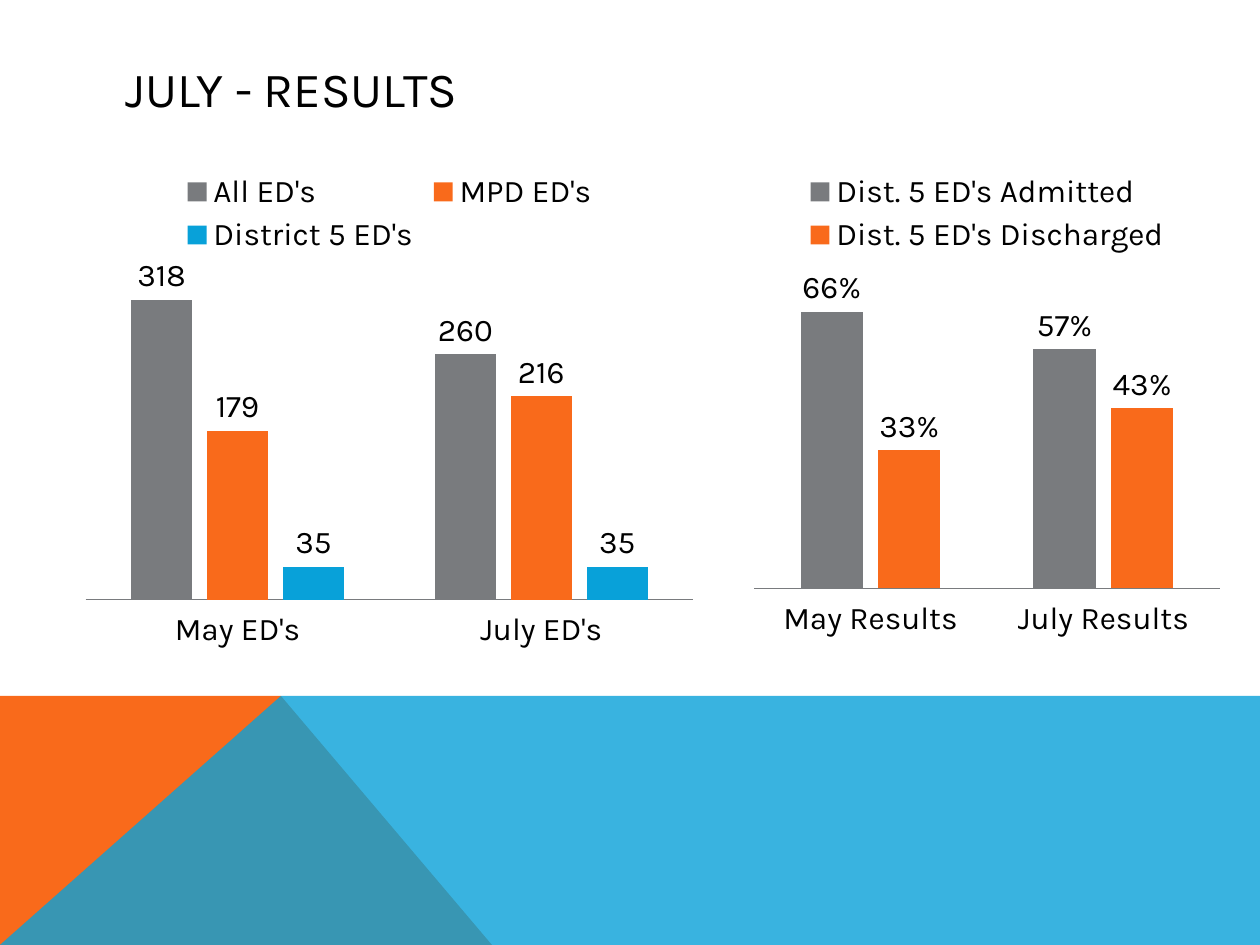
from lxml.etree import SubElement
from pptx import Presentation
from pptx.chart.data import CategoryChartData
from pptx.dml.color import RGBColor
from pptx.enum.chart import XL_CHART_TYPE as ChartType
from pptx.enum.chart import XL_LABEL_POSITION as LabelPos
from pptx.enum.chart import XL_LEGEND_POSITION as LegendPos
from pptx.enum.chart import XL_TICK_LABEL_POSITION as TickLabelPos
from pptx.enum.chart import XL_TICK_MARK as TickMark
from pptx.enum.text import MSO_ANCHOR, MSO_AUTO_SIZE, PP_ALIGN
from pptx.oxml import parse_xml
from pptx.oxml.ns import qn
from pptx.util import Emu, Pt

PX = 914400 / 126
WIDTH, HEIGHT = 1260, 945
FONT = "Karla"
BLACK = RGBColor(0x00, 0x00, 0x00)
GRAY = RGBColor(0x79, 0x7B, 0x7E)
ORANGE = RGBColor(0xF9, 0x6A, 0x1B)
BLUE = RGBColor(0x08, 0xA1, 0xD9)
SERIES_COLORS = (GRAY, ORANGE, BLUE)
CHART_NS = "http://schemas.openxmlformats.org/drawingml/2006/chart"

COUNTS = {
    "categories": ("May ED's", "July ED's"),
    "series": {"All ED's": (318, 260), "MPD ED's": (179, 216),
               "District 5 ED's": (35, 35)},
    "format": "General", "maximum": 350,
    "plot": {"x": 0.02, "y": 0.226, "w": 0.96, "h": 0.67},
}
OUTCOMES = {
    "categories": ("May Results", "July Results"),
    "series": {"Dist. 5 ED's Admitted": (0.66, 0.57),
               "Dist. 5 ED's Discharged": (0.33, 0.43)},
    "format": "0%", "maximum": 0.7,
    "plot": {"x": 0.038, "y": 0.276, "w": 0.924, "h": 0.592},
}


def px(*lengths):
    return [Emu(round(length * PX)) for length in lengths]


def style_font(font, size):
    for name, value in {"name": FONT, "size": Pt(size), "bold": False}.items():
        setattr(font, name, value)
    font.color.rgb = BLACK


def add_polygon(slide, points, color, alpha=None):
    builder = slide.shapes.build_freeform(*points[0], scale=PX)
    builder.add_line_segments(points[1:], close=True)
    polygon = builder.convert_to_shape()
    polygon.shadow.inherit = False
    polygon.fill.solid()
    polygon.fill.fore_color.rgb = color
    polygon.line.fill.background()
    if alpha:
        srgb = polygon.fill._xPr.find(".//" + qn("a:srgbClr"))
        SubElement(srgb, qn("a:alpha")).set("val", str(alpha * 1000))


def add_footer_band(slide, left, top, width, height):
    right, bottom = left + width, top + height
    peak, foot = left + 281, left + 492
    add_polygon(slide, [(left, bottom), (left, top), (peak, top), (foot, bottom)], ORANGE)
    add_polygon(slide, [(left, bottom), (peak, top), (right, top), (right, bottom)], BLUE, 80)


def add_title(slide, left, top, width, height):
    title = slide.shapes.title
    title.left, title.top, title.width, title.height = px(left, top, width, height)
    frame = title.text_frame
    frame.text = "JULY - RESULTS"
    frame.auto_size = MSO_AUTO_SIZE.NONE
    frame.vertical_anchor = MSO_ANCHOR.MIDDLE
    heading = frame.paragraphs[0]
    heading.alignment = PP_ALIGN.LEFT
    style_font(heading.runs[0].font, 28)


def set_plot_layout(chart, plot):
    edges = "".join(f'<c:{key}Mode val="edge"/>' for key in "xy")
    sizes = "".join(f'<c:{key} val="{value}"/>' for key, value in plot.items())
    layout = parse_xml(f'<c:layout xmlns:c="{CHART_NS}"><c:manualLayout>'
                       f'<c:layoutTarget val="inner"/>{edges}{sizes}'
                       '</c:manualLayout></c:layout>')
    area = chart._chartSpace.find(".//" + qn("c:plotArea"))
    for automatic in area.findall(qn("c:layout")):
        area.remove(automatic)
    area.insert(0, layout)


def add_column_chart(slide, content, left, top, width, height):
    data = CategoryChartData(number_format=content["format"])
    data.categories = content["categories"]
    for name, values in content["series"].items():
        data.add_series(name, values)
    chart = slide.shapes.add_chart(
        ChartType.COLUMN_CLUSTERED, *px(left, top, width, height), data).chart
    chart.has_title = False
    style_font(chart.font, 18)
    set_plot_layout(chart, content["plot"])

    # Legend
    chart.has_legend = True
    chart.legend.position = LegendPos.TOP
    chart.legend.include_in_layout = False

    # Axes
    months, scale = chart.category_axis, chart.value_axis
    months.major_tick_mark = months.minor_tick_mark = TickMark.NONE
    months.tick_label_position = TickLabelPos.LOW
    months.format.line.color.rgb = GRAY
    months.format.line.width = Pt(0.75)
    for name, value in {"minimum_scale": 0, "maximum_scale": content["maximum"],
                        "has_major_gridlines": False, "visible": False}.items():
        setattr(scale, name, value)

    # Columns and their labels
    columns = chart.plots[0]
    for name, value in {"gap_width": 150, "overlap": -25,
                        "vary_by_categories": False}.items():
        setattr(columns, name, value)
    for series, color in zip(columns.series, SERIES_COLORS):
        series.format.fill.solid()
        series.format.fill.fore_color.rgb = color
        labels = series.data_labels
        for name, value in {"show_value": True, "position": LabelPos.OUTSIDE_END,
                            "number_format": content["format"],
                            "number_format_is_linked": False}.items():
            setattr(labels, name, value)
        style_font(labels.font, 18)


def main():
    deck = Presentation()
    deck.slide_width, deck.slide_height = px(WIDTH, HEIGHT)
    slide = deck.slides.add_slide(deck.slide_layouts[5])
    add_footer_band(slide, 0, 696, WIDTH, HEIGHT - 696)
    add_title(slide, 113, 50, 1036, 76)
    add_column_chart(slide, COUNTS, 73, 158, 633, 493)
    add_column_chart(slide, OUTCOMES, 735, 158, 504, 496)
    deck.save("out.pptx")


if __name__ == "__main__":
    main()
